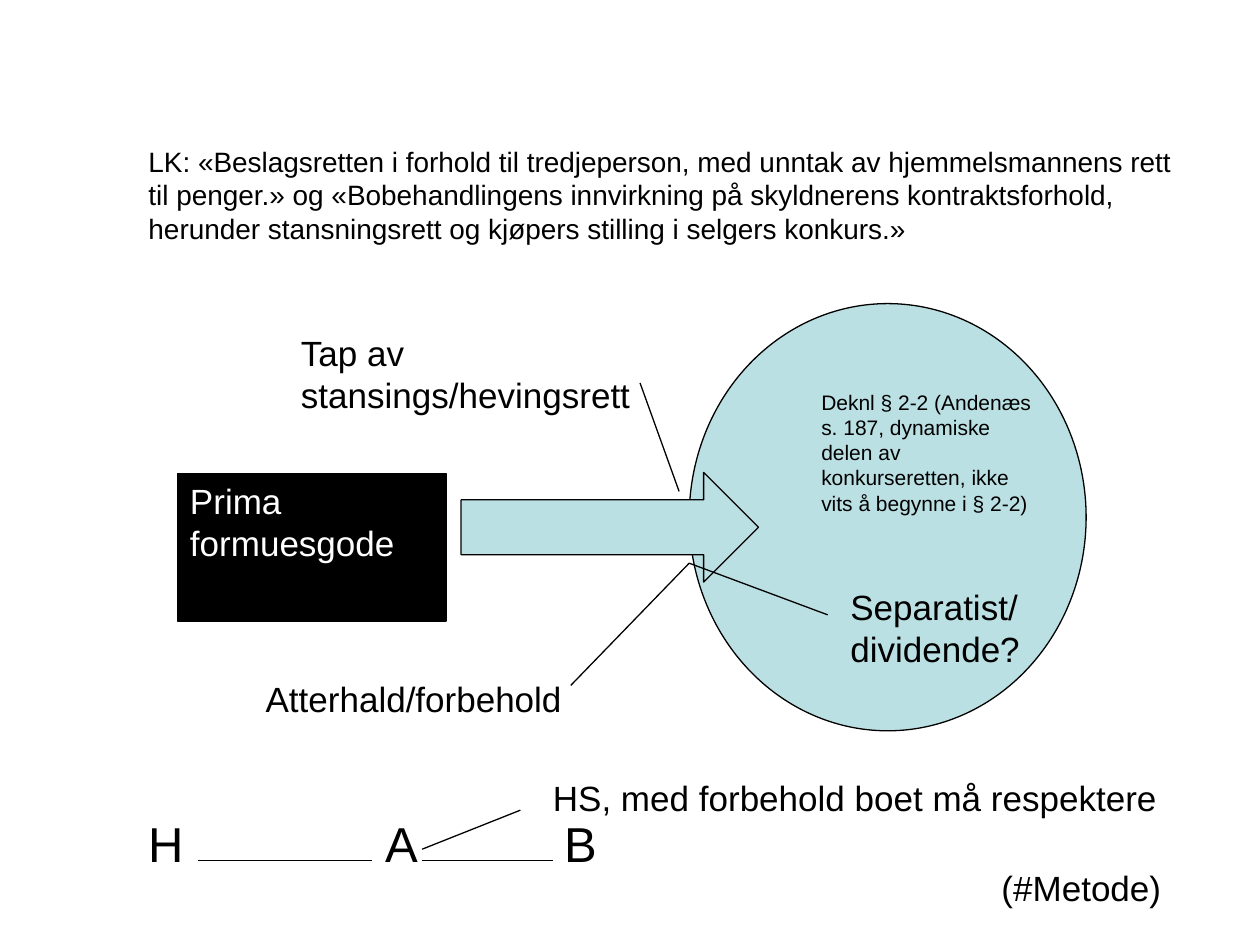
from pptx import Presentation
from pptx.dml.color import RGBColor
from pptx.enum.shapes import MSO_CONNECTOR as Conn, MSO_SHAPE as Kind
from pptx.enum.text import MSO_ANCHOR as Anchor
from pptx.oxml.ns import qn
from pptx.util import Inches, Pt
from lxml.etree import SubElement

BLACK, WHITE, TEAL = "000000", "FFFFFF", "BBE0E3"


def paint(code):
    """Return the colour for a hex string."""
    return RGBColor.from_string(code)


def write(frame, text, size=20, color=BLACK, anchor=Anchor.TOP):
    """Fill a text frame with one formatted paragraph."""
    frame.word_wrap = True
    frame.vertical_anchor = anchor
    par = frame.paragraphs[0]
    par.alignment = 1
    run = par.add_run()
    run.text = text
    run.font.name = "Arial"
    run.font.size = Pt(size)
    run.font.color.rgb = paint(color)


def label(slide, text, x, y, w, h, **style):
    """Add a text box."""
    box = slide.shapes.add_textbox(Inches(x), Inches(y), Inches(w), Inches(h))
    write(box.text_frame, text, **style)


def shape(slide, kind, x, y, w, h, fill=TEAL):
    """Add an outlined preset shape."""
    item = slide.shapes.add_shape(kind, Inches(x), Inches(y), Inches(w), Inches(h))
    item.shadow.inherit = False
    item.fill.solid()
    item.fill.fore_color.rgb = paint(fill)
    item.line.color.rgb = paint(BLACK)
    item.line.width = Pt(0.75)
    return item


def line(slide, x1, y1, x2, y2):
    """Add a thin straight line."""
    rule = slide.shapes.add_connector(
        Conn.STRAIGHT, Inches(x1), Inches(y1), Inches(x2), Inches(y2))
    rule.line.color.rgb = paint(BLACK)
    rule.line.width = Pt(0.75)
    SubElement(rule._element.spPr, qn("a:effectLst"))


def heading(slide, x, y, w, h):
    """Place the curriculum quotation."""
    label(slide, "LK: «Beslagsretten i forhold til tredjeperson, med unntak av "
          "hjemmelsmannens rett til penger.» og «Bobehandlingens innvirkning på "
          "skyldnerens kontraktsforhold, herunder stansningsrett og kjøpers "
          "stilling i selgers konkurs.»",
          x, y, w, h, size=16, anchor=Anchor.MIDDLE)


def estate(slide, x, y, w, h):
    """Place the circle of the estate and its texts."""
    shape(slide, Kind.OVAL, x, y, w, h)
    label(slide, "Deknl § 2-2 (Andenæs s. 187, dynamiske delen av "
          "konkurseretten, ikke vits å begynne i § 2-2)",
          x + 0.95, y + 0.63, 1.97, 1.11, size=12)
    label(slide, "Separatist/dividende?", x + 1.18, y + 2.19, 1.55, 0.77)


def asset(slide, x, y, w, h):
    """Place the asset, its arrow and the limits on it."""
    block = shape(slide, Kind.RECTANGLE, x, y, w, h, fill=BLACK)
    write(block.text_frame, "Prima formuesgode", color=WHITE)
    shape(slide, Kind.RIGHT_ARROW, x + w + 0.12, y - 0.01, 2.36, 0.87)
    label(slide, "Tap av stansings/hevingsrett", x + 0.88, y - 1.18, 3.12, 0.77)
    label(slide, "Atterhald/forbehold", x + 0.6, y + 1.57, 2.76, 0.44)
    line(slide, x + 3.67, y - 0.72, x + 3.98, y + 0.14)
    fork = x + 4.06, y + 0.71
    for dx, dy in ((-0.94, 0.97), (1.1, 0.41)):
        line(slide, *fork, fork[0] + dx, fork[1] + dy)


def chain(slide, x, y, w, h):
    """Place the chain of parties with its remarks."""
    for name, dx in (("H", 0), ("A", 1.88), ("B", 3.3)):
        label(slide, name, x + dx, y + 0.3, 0.5, 0.56, size=28)
    for start, end in ((0.49, 1.87), (2.27, 3.31)):
        line(slide, x + start, y + 0.72, x + end, y + 0.72)
    line(slide, x + 2.27, y + 0.63, x + 3.05, y + 0.32)
    label(slide, "HS, med forbehold boet må respektere", x + 3.21, y, 5.04, 0.44)
    label(slide, "(#Metode)", x + w - 1.67, y + h - 0.44, 1.67, 0.44)


def main():
    """Build and save the slide."""
    deck = Presentation()
    deck.slide_width, deck.slide_height = Inches(10), Inches(7.5)
    slide = deck.slides.add_slide(deck.slide_layouts[6])
    heading(slide, 1.08, 0.92, 8.42, 1.25)
    estate(slide, 5.47, 2.41, 3.15, 3.39)
    asset(slide, 1.41, 3.76, 2.13, 1.17)
    chain(slide, 1.08, 6.11, 8.44, 1.16)
    deck.save("out.pptx")


if __name__ == "__main__":
    main()
